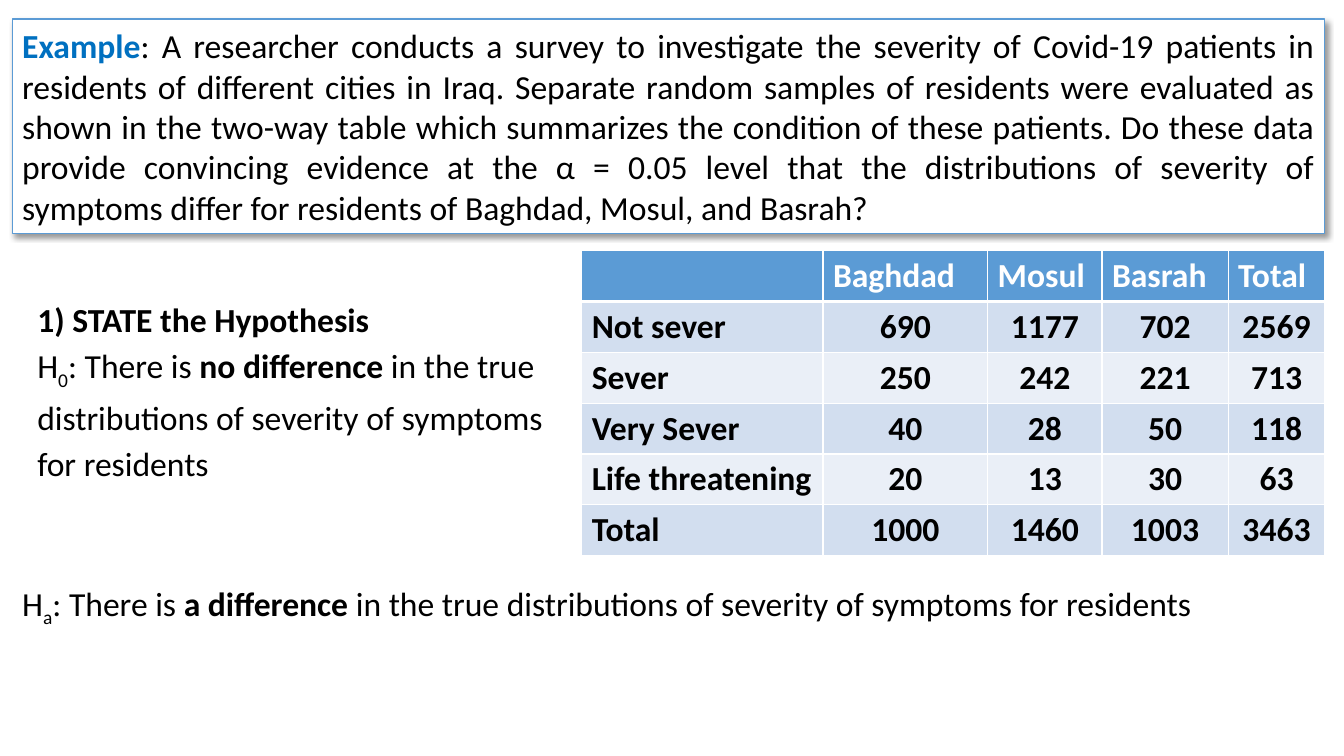
from lxml.etree import SubElement
from pptx import Presentation
from pptx.dml.color import RGBColor
from pptx.enum.shapes import MSO_SHAPE as Shape
from pptx.enum.text import MSO_ANCHOR as Anchor, MSO_AUTO_SIZE as AutoSize, PP_ALIGN as Align
from pptx.oxml import parse_xml
from pptx.oxml.ns import nsdecls, qn
from pptx.util import Cm, Pt

BLACK, WHITE, BLUE, ACCENT = "000000", "FFFFFF", "5B9BD5", "0070C0"
BANDS = "D2DEEF", "EAEFF7"

QUESTION = (
    ": A researcher conducts a survey to investigate the severity of Covid-19 patients in "
    "residents of different cities in Iraq. Separate random samples of residents were evaluated "
    "as shown in the two-way table which summarizes the condition of these patients. Do these "
    "data provide convincing evidence at the α = 0.05 level that the distributions of severity "
    "of symptoms differ for residents of Baghdad, Mosul, and Basrah?"
)
CLAIM = "in the true distributions of severity of symptoms for residents"
SURVEY = [
    ("", "Baghdad", "Mosul", "Basrah", "Total"),
    ("Not sever", "690", "1177", "702", "2569"),
    ("Sever", "250", "242", "221", "713"),
    ("Very Sever", "40", "28", "50", "118"),
    ("Life threatening", "20", "13", "30", "63"),
    ("Total", "1000", "1460", "1003", "3463"),
]
CITY_WIDTHS = 6.08, 4.15, 2.88, 3.18, 2.44


def paint(target, color):
    target.solid()
    target.fore_color.rgb = RGBColor.from_string(color)


def style(run, color=BLACK, bold=False, subscript=False):
    run.font.name = "Calibri"
    run.font.size = Pt(24)
    run.font.bold = bold
    run.font.color.rgb = RGBColor.from_string(color)
    if subscript:
        run._r.get_or_add_rPr().set("baseline", "-25000")


def write(paragraph, pieces):
    for words, look in pieces:
        run = paragraph.add_run()
        run.text = words
        style(run, **look)


def hypothesis(mark, verdict):
    return [("H", {}), (mark, {"subscript": True}), (": There is ", {}),
            (verdict, {"bold": True}), (CLAIM, {})]


def add_example(slide, left, top, width, height):
    example = slide.shapes.add_shape(Shape.RECTANGLE, Cm(left), Cm(top), Cm(width), Cm(height))
    paint(example.fill, WHITE)
    paint(example.line.fill, BLUE)
    example.line.width = Pt(1)
    example.shadow.inherit = False
    effects = example._element.spPr.find(qn("a:effectLst"))
    effects.append(parse_xml(
        f'<a:outerShdw {nsdecls("a")} blurRad="{Pt(4)}" dist="{Pt(3)}" dir="2700000" '
        f'algn="tl" rotWithShape="0"><a:srgbClr val="{BLACK}"><a:alpha val="40000"/>'
        '</a:srgbClr></a:outerShdw>'))
    frame = example.text_frame
    frame.word_wrap = True
    frame.auto_size = AutoSize.SHAPE_TO_FIT_TEXT
    frame.paragraphs[0].alignment = Align.JUSTIFY
    write(frame.paragraphs[0], [("Example", {"color": ACCENT, "bold": True}), (QUESTION, {})])


def add_statement(slide, left, top, width, height, lines):
    frame = slide.shapes.add_textbox(Cm(left), Cm(top), Cm(width), Cm(height)).text_frame
    frame.word_wrap = True
    frame.auto_size = AutoSize.SHAPE_TO_FIT_TEXT
    for index, pieces in enumerate(lines):
        paragraph = frame.add_paragraph() if index else frame.paragraphs[0]
        paragraph.line_spacing = 1.14
        write(paragraph, pieces)


def border(cell, bottom):
    properties = cell._tc.get_or_add_tcPr()
    for index, (side, points) in enumerate(zip("LRTB", (1, 1, 1, bottom))):
        edge = SubElement(properties, qn(f"a:ln{side}"), w=str(Pt(points)))
        SubElement(SubElement(edge, qn("a:solidFill")), qn("a:srgbClr"), val=WHITE)
        properties.insert(index, edge)


def add_survey(slide, left, top, width, height):
    survey = slide.shapes.add_table(len(SURVEY), len(CITY_WIDTHS), Cm(left), Cm(top),
                                    Cm(width), Cm(height)).table
    for column, share in zip(survey.columns, CITY_WIDTHS):
        column.width = Cm(width * share / sum(CITY_WIDTHS))
    for r, severity in enumerate(SURVEY):
        survey.rows[r].height = Cm(height / len(SURVEY))
        for c, entry in enumerate(severity):
            cell = survey.cell(r, c)
            cell.text = entry
            paint(cell.fill, BANDS[(r - 1) % 2] if r else BLUE)
            border(cell, 1 if r else 3)
            paragraph = cell.text_frame.paragraphs[0]
            if r and c:
                cell.vertical_anchor = Anchor.MIDDLE
                paragraph.alignment = Align.CENTER
            for run in paragraph.runs:
                style(run, BLACK if r else WHITE, bold=True)


def main():
    deck = Presentation()
    deck.slide_width, deck.slide_height = Cm(33.87), Cm(19.05)
    slide = deck.slides.add_slide(deck.slide_layouts[6])
    add_example(slide, 0.31, 0.48, 33.07, 5.4)
    add_survey(slide, 14.66, 6.32, 18.73, 7.68)
    add_statement(slide, 0.31, 14.4, 32.36, 1.42, [hypothesis("a", "a difference ")])
    add_statement(slide, 0.69, 7.26, 14.35, 4.93, [
        [("1) STATE the Hypothesis", {"bold": True})],
        hypothesis("0", "no difference "),
    ])
    deck.save("out.pptx")


if __name__ == "__main__":
    main()
